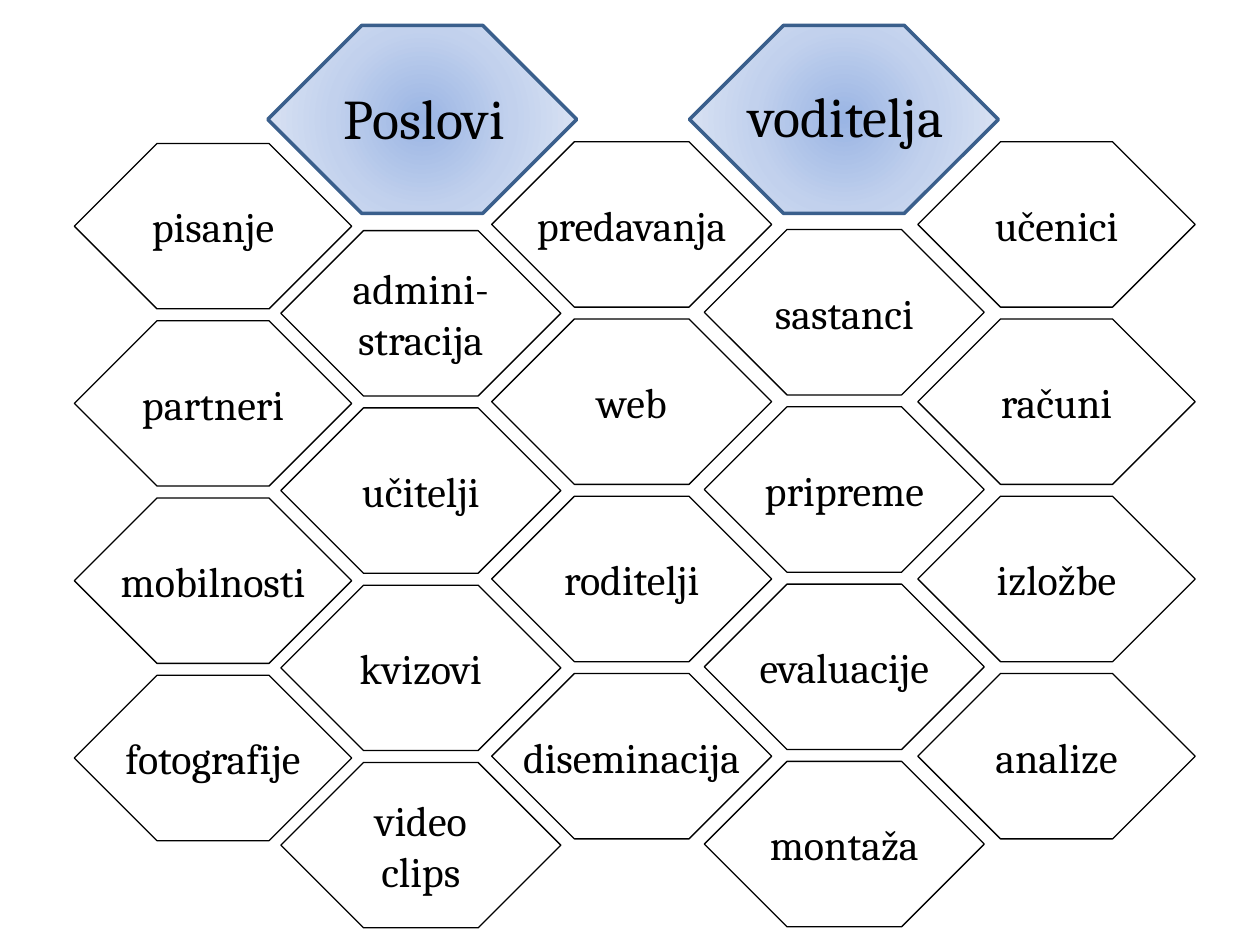
"""Build a honeycomb slide of a project leader's tasks."""
from pptx import Presentation
from pptx.dml.color import RGBColor
from pptx.enum.shapes import MSO_SHAPE
from pptx.enum.text import MSO_ANCHOR, MSO_AUTO_SIZE, PP_ALIGN
from pptx.oxml import parse_xml
from pptx.oxml.ns import nsdecls, qn
from pptx.util import Pt

COLUMNS = [
    {"left": 42.5, "top": 82, "width": 158.5,
     "tasks": ["pisanje", "partneri", "mobilnosti", "fotografije"]},
    {"left": 160.5, "top": 131.8, "width": 160,
     "tasks": ["admini-\nstracija", "učitelji", "kvizovi", "video\nclips"]},
    {"left": 281, "top": 81, "width": 160,
     "tasks": ["predavanja", "web", "roditelji", "diseminacija"]},
    {"left": 402.5, "top": 131.2, "width": 160,
     "tasks": ["sastanci", "pripreme", "evaluacije", "montaža"]},
    {"left": 524.5, "top": 81, "width": 158.5,
     "tasks": ["učenici", "računi", "izložbe", "analize"]},
]
TITLES = [
    {"text": "Poslovi", "left": 153, "label_left": 170, "label_top": 44},
    {"text": "voditelja", "left": 394, "label_left": 411, "label_top": 43},
]
GRADIENT = [(0, RGBColor(0x9A, 0xB5, 0xE4)),
            (50, RGBColor(0xC2, 0xD1, 0xED)),
            (100, RGBColor(0xE1, 0xE8, 0xF5))]
WHITE = RGBColor(0xFF, 0xFF, 0xFF)
BLACK = RGBColor(0x00, 0x00, 0x00)
NAVY = RGBColor(0x3A, 0x5F, 0x8C)
CELL_HEIGHT = 94.5
ROW_PITCH = 101.3


def write_text(frame, text, size, anchor, wrap):
    """Fill a frame with centred paragraphs, one for each line of text."""
    frame.text = text
    frame.word_wrap = wrap
    frame.vertical_anchor = anchor
    for para in frame.paragraphs:
        para.alignment = PP_ALIGN.CENTER
        for span in para.runs:
            span.font.name = "Cambria"
            span.font.size = Pt(size)
            span.font.color.rgb = BLACK


def add_cell(page, kind, left, top, width, height, line, weight):
    """Add a white outlined shape without a shadow."""
    cell = page.shapes.add_shape(kind, Pt(left), Pt(top), Pt(width), Pt(height))
    cell.shadow.inherit = False
    cell.fill.solid()
    cell.fill.fore_color.rgb = WHITE
    cell.line.color.rgb = line
    cell.line.width = Pt(weight)
    cell.adjustments[0] = 0.5
    return cell


def fill_radial(shape, stops):
    """Replace a solid fill by a gradient that spreads from the centre."""
    stop_xml = "".join(
        f'<a:gs pos="{position * 1000}"><a:srgbClr val="{color}"/></a:gs>'
        for position, color in stops)
    gradient = parse_xml(
        f'<a:gradFill {nsdecls("a")} rotWithShape="1"><a:gsLst>{stop_xml}</a:gsLst>'
        '<a:path path="circle"><a:fillToRect l="50000" t="50000" r="50000" b="50000"/>'
        '</a:path></a:gradFill>')
    properties = shape._element.spPr
    properties.replace(properties.find(qn("a:solidFill")), gradient)


def add_title(page, text, left, label_left, label_top):
    """Add a blue hexagon with its label on top."""
    hexagon = add_cell(page, MSO_SHAPE.HEXAGON, left, 14.5, 176.5, 107.5, NAVY, 2)
    fill_radial(hexagon, GRADIENT)
    label = page.shapes.add_textbox(Pt(label_left), Pt(label_top), Pt(145), Pt(46))
    write_text(label.text_frame, text, 32, MSO_ANCHOR.TOP, True)
    label.text_frame.auto_size = MSO_AUTO_SIZE.SHAPE_TO_FIT_TEXT


def main():
    """Build and save the deck."""
    deck = Presentation()
    deck.slide_width, deck.slide_height = Pt(720), Pt(540)
    page = deck.slides.add_slide(deck.slide_layouts[6])
    for column in COLUMNS:
        for row, task in enumerate(column["tasks"]):
            cell = add_cell(page, MSO_SHAPE.OCTAGON, column["left"],
                            column["top"] + row * ROW_PITCH, column["width"],
                            CELL_HEIGHT, BLACK, 0.75)
            write_text(cell.text_frame, task, 24, MSO_ANCHOR.MIDDLE, False)
    for title in TITLES:
        add_title(page, **title)
    deck.save("out.pptx")


if __name__ == "__main__":
    main()
